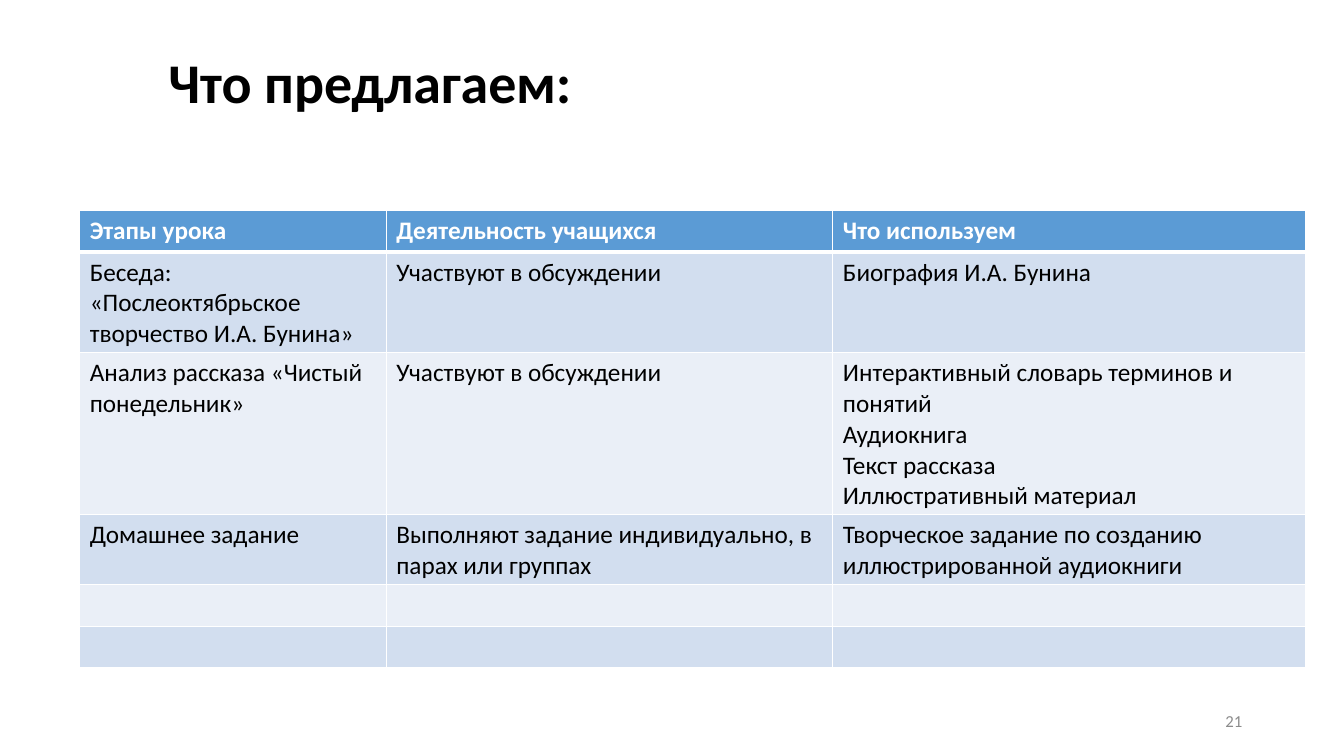
from lxml import etree
from pptx import Presentation
from pptx import util as u
from pptx.dml.color import RGBColor
from pptx.enum import text
from pptx.oxml.ns import qn

HEADER = ["Этапы урока", "Деятельность учащихся", "Что используем"]
STAGES = [
    ["Беседа: «Послеоктябрьское творчество И.А. Бунина»",
     "Участвуют в обсуждении", "Биография И.А. Бунина"],
    ["Анализ рассказа «Чистый понедельник»", "Участвуют в обсуждении",
     ["Интерактивный словарь терминов и понятий",
      "Аудиокнига\nТекст рассказа", "Иллюстративный материал"]],
    ["Домашнее задание",
     "Выполняют задание индивидуально, в парах или группах",
     "Творческое задание по созданию иллюстрированной аудиокниги"],
    ["", "", ""],
    ["", "", ""],
]


def colour(value):
    """Turn a hex string into a colour."""
    return RGBColor.from_string(value)


class LessonPage:
    """Hold the style and the current slide; lengths are percentages of it."""

    font = "Calibri"
    ink, paper, grey = "000000", "FFFFFF", "8C8C8C"
    accent, bands = "5B9BD5", ("D2DEEF", "EAEFF7")

    def __init__(self, deck):
        """Add a title-only slide to the deck."""
        self.width, self.height = deck.slide_width, deck.slide_height
        self.page = deck.slides.add_slide(deck.slide_layouts[5])

    def across(self, share):
        """Convert a share of the width to a length."""
        return u.Emu(round(self.width * share / 100))

    def down(self, share):
        """Convert a share of the height to a length."""
        return u.Emu(round(self.height * share / 100))

    def area(self, left, top, width, height):
        """Convert four shares to a position and a size."""
        return self.across(left), self.down(top), self.across(width), self.down(height)

    def add_text(self, frame, content, size, hue, bold=False,
                 align=text.PP_ALIGN.LEFT, spacing=None):
        """Add one paragraph, or a list of them, run by run."""
        lines = [content] if isinstance(content, str) else content
        for index, line in enumerate(lines):
            para = frame.add_paragraph() if index else frame.paragraphs[0]
            para.alignment = align
            para.font.size = u.Pt(size)
            if spacing:
                para.line_spacing = spacing
            for number, piece in enumerate(line.split("\n")):
                if number:
                    para.add_line_break()
                if piece:
                    span = para.add_run()
                    span.text = piece
                    span.font.name, span.font.size = self.font, u.Pt(size)
                    span.font.bold = bold
                    span.font.color.rgb = colour(hue)

    def title(self, content, *place):
        """Place and fill the title."""
        box = self.page.shapes.title
        box.left, box.top, box.width, box.height = self.area(*place)
        frame = box.text_frame
        frame.word_wrap, frame.auto_size = True, text.MSO_AUTO_SIZE.NONE
        frame.vertical_anchor = text.MSO_ANCHOR.MIDDLE
        self.add_text(frame, content, 40, self.ink, bold=True, spacing=0.9)

    def page_number(self, content, *place):
        """Add the page number."""
        frame = self.page.shapes.add_textbox(*self.area(*place)).text_frame
        frame.word_wrap = True
        frame.vertical_anchor = text.MSO_ANCHOR.MIDDLE
        self.add_text(frame, content, 12, self.grey, align=text.PP_ALIGN.RIGHT)

    def border(self, cell, top, bottom):
        """Draw the four edges of a cell."""
        properties = cell._tc.get_or_add_tcPr()
        for side, points in (("L", 1), ("R", 1), ("T", top), ("B", bottom)):
            line = etree.SubElement(properties, qn(f"a:ln{side}"), w=str(u.Pt(points)))
            fill = etree.SubElement(line, qn("a:solidFill"))
            etree.SubElement(fill, qn("a:srgbClr"), val=self.paper)

    def table(self, rows, left, top, columns, row_height):
        """Add a table with a header row and banded body rows."""
        place = self.area(left, top, sum(columns), row_height * len(rows))
        grid = self.page.shapes.add_table(len(rows), len(columns), *place).table
        for column, share in zip(grid.columns, columns):
            column.width = self.across(share)
        for index, row in enumerate(rows):
            grid.rows[index].height = self.down(row_height)
            header = index == 0
            for number, content in enumerate(row):
                cell = grid.cell(index, number)
                self.border(cell, 3 if index == 1 else 1, 3 if header else 1)
                cell.fill.solid()
                cell.fill.fore_color.rgb = colour(
                    self.accent if header else self.bands[(index - 1) % 2])
                self.add_text(cell.text_frame, content, 18,
                              self.paper if header else self.ink, bold=header)


def main():
    """Build and save the deck."""
    deck = Presentation()
    deck.slide_width, deck.slide_height = u.Inches(13.33), u.Inches(7.5)
    lesson = LessonPage(deck)
    lesson.page_number("21", 70.67, 92.67, 22.5, 5.33)
    lesson.title("Что предлагаем:", 11.78, 4.4, 82.6, 13.73)
    lesson.table([HEADER] + STAGES, 5.93, 27.87, (22.81, 33.23, 35.18), 5.47)
    deck.save("out.pptx")


if __name__ == "__main__":
    main()
